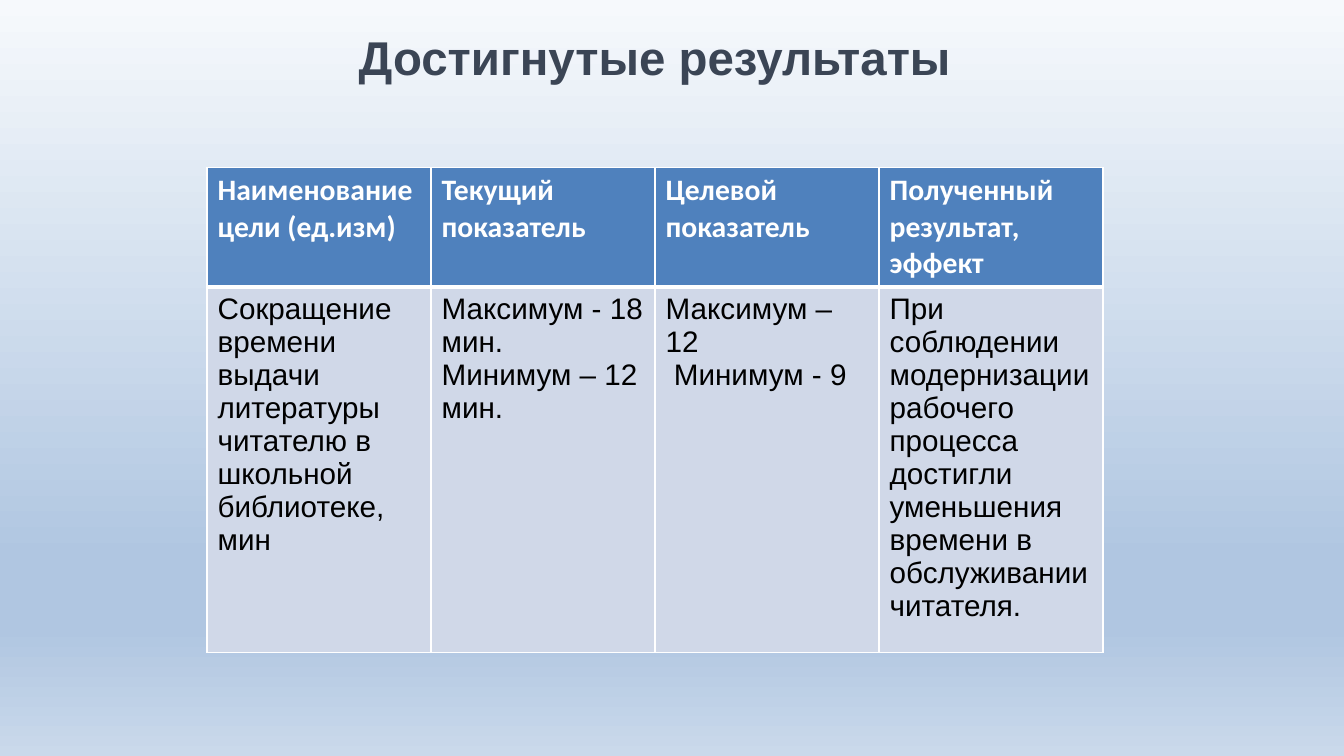
from lxml.etree import SubElement
from pptx import Presentation
from pptx.dml.color import RGBColor
from pptx.enum.text import MSO_ANCHOR, PP_ALIGN
from pptx.oxml.ns import qn
from pptx.util import Inches, Pt

TITLE_INK = RGBColor(0x3B, 0x45, 0x55)
HEADER_BLUE = RGBColor(0x4F, 0x81, 0xBD)
BODY_BLUE = RGBColor(0xD0, 0xD8, 0xE8)
WHITE = RGBColor(0xFF, 0xFF, 0xFF)
BLACK = RGBColor(0x00, 0x00, 0x00)
SKY_STOPS = [
    (0, RGBColor(0xF6, 0xF9, 0xFC)),
    (74, RGBColor(0xB0, 0xC6, 0xE1)),
    (83, RGBColor(0xB0, 0xC6, 0xE1)),
    (100, RGBColor(0xCA, 0xD9, 0xEB)),
]

HEADINGS = [
    ["Наименование цели (ед.изм)"],
    ["Текущий показатель"],
    ["Целевой показатель"],
    ["Полученный результат, эффект"],
]
RESULTS = [
    ["Сокращение времени выдачи литературы читателю в школьной библиотеке, мин"],
    ["Максимум - 18 мин.", "Минимум – 12 мин."],
    ["Максимум – 12", " Минимум - 9"],
    ["При соблюдении модернизации рабочего процесса достигли уменьшения "
     "времени в обслуживании читателя."],
]
HEADER_HEIGHT = 1.1


def add_run(paragraph, text, font_name, size, color, bold):
    run = paragraph.add_run()
    run.text = text
    run.font.name = font_name
    run.font.size = Pt(size)
    run.font.color.rgb = color
    run.font.bold = bold


def paint_sky(slide):
    fill = slide.background.fill
    fill.gradient()
    fill.gradient_angle = 270
    stops = next(slide.element.iter(qn("a:gsLst")))
    for stop in list(stops):
        stops.remove(stop)
    for percent, color in SKY_STOPS:
        stop = SubElement(stops, qn("a:gs"), pos=str(percent * 1000))
        SubElement(stop, qn("a:srgbClr"), val=str(color))


def place_title(slide, left, top, width, height):
    title = slide.shapes.title
    title.left, title.top = Inches(left), Inches(top)
    title.width, title.height = Inches(width), Inches(height)
    frame = title.text_frame
    frame.word_wrap = True
    frame.vertical_anchor = MSO_ANCHOR.TOP
    heading = frame.paragraphs[0]
    heading.alignment = PP_ALIGN.CENTER
    add_run(heading, "Достигнутые результаты", "Arial", 32, TITLE_INK, True)


def set_borders(cell, top, bottom):
    """Draw white borders, 1 pt at the sides; they must precede the fill."""
    properties = cell._tc.get_or_add_tcPr()
    widths = {"a:lnL": 1, "a:lnR": 1, "a:lnT": top, "a:lnB": bottom}
    for position, (side, width) in enumerate(widths.items()):
        line = SubElement(properties, qn(side), w=str(Pt(width)))
        fill = SubElement(line, qn("a:solidFill"))
        SubElement(fill, qn("a:srgbClr"), val=str(WHITE))
        properties.insert(position, line)


def fill_cell(cell, lines, fill_color, font_name, color, bold):
    cell.fill.solid()
    cell.fill.fore_color.rgb = fill_color
    frame = cell.text_frame
    for index, line in enumerate(lines):
        paragraph = frame.add_paragraph() if index else frame.paragraphs[0]
        add_run(paragraph, line, font_name, 20, color, bold)


def add_results_table(slide, left, top, width, height):
    table = slide.shapes.add_table(
        2, len(HEADINGS), Inches(left), Inches(top), Inches(width), Inches(height)
    ).table
    table.rows[0].height = Inches(HEADER_HEIGHT)
    table.rows[1].height = Inches(height - HEADER_HEIGHT)
    for column, (heading, result) in enumerate(zip(HEADINGS, RESULTS)):
        header_cell, result_cell = table.cell(0, column), table.cell(1, column)
        fill_cell(header_cell, heading, HEADER_BLUE, "Calibri", WHITE, True)
        set_borders(header_cell, top=1, bottom=3)
        fill_cell(result_cell, result, BODY_BLUE, "Arial", BLACK, False)
        set_borders(result_cell, top=3, bottom=1)


def main():
    presentation = Presentation()
    presentation.slide_width = Inches(12.6)
    presentation.slide_height = Inches(7.09)
    slide = presentation.slides.add_slide(presentation.slide_layouts[5])
    paint_sky(slide)
    place_title(slide, 0.39, 0.21, 11.5, 3.33)
    add_results_table(slide, 1.94, 1.57, 8.4, 4.53)
    presentation.save("out.pptx")


if __name__ == "__main__":
    main()
